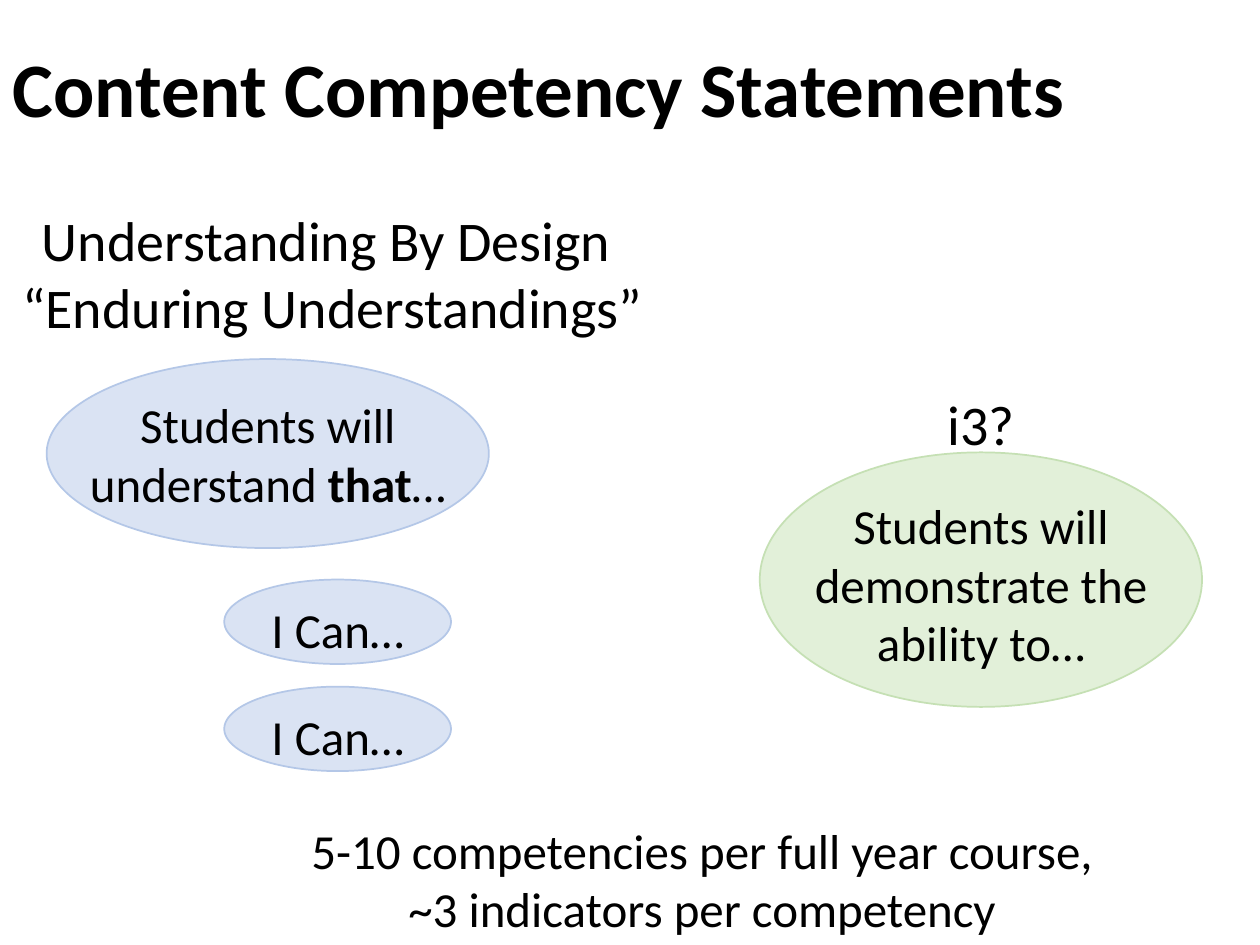
from pptx import Presentation
from pptx.dml.color import RGBColor
from pptx.enum.shapes import MSO_SHAPE
from pptx.enum.text import MSO_ANCHOR, MSO_AUTO_SIZE, PP_ALIGN
from pptx.util import Inches, Pt

OVAL = MSO_SHAPE.OVAL
MIDDLE = MSO_ANCHOR.MIDDLE
NO_FIT, GROW = MSO_AUTO_SIZE.NONE, MSO_AUTO_SIZE.SHAPE_TO_FIT_TEXT
LEFT, CENTER = PP_ALIGN.LEFT, PP_ALIGN.CENTER

FONT = "Calibri"
BLACK = "000000"
BLUE = ("DAE3F3", "B4C7E7")
GREEN = ("E2F0D9", "C5E0B4")


def color(hex_string):
    return RGBColor.from_string(hex_string)


def format_runs(paragraph, size, bold=False):
    for run in paragraph.runs:
        run.font.name = FONT
        run.font.size = Pt(size)
        run.font.bold = bold
        run.font.color.rgb = color(BLACK)


def add_title(slide, box, text):
    title = slide.shapes.title
    title.left, title.top, title.width, title.height = map(Inches, box)
    frame = title.text_frame
    frame.text = text
    frame.word_wrap = True
    frame.auto_size = NO_FIT
    frame.vertical_anchor = MIDDLE
    paragraph = frame.paragraphs[0]
    paragraph.alignment = LEFT
    paragraph.line_spacing = 0.9
    format_runs(paragraph, 44, bold=True)


def add_text(slide, box, lines, size, wrap=True, insets=(0.1, 0.05)):
    """Add centred lines of text and return their text frame."""
    frame = slide.shapes.add_textbox(*map(Inches, box)).text_frame
    frame.text = "\n".join(lines)
    frame.word_wrap = wrap
    frame.auto_size = GROW
    frame.margin_left = frame.margin_right = Inches(insets[0])
    frame.margin_top = frame.margin_bottom = Inches(insets[1])
    for paragraph in frame.paragraphs:
        paragraph.alignment = CENTER
        format_runs(paragraph, size)
    return frame


def add_bubble(slide, box, colors, text, text_offset, text_height):
    """Add an ellipse with a text box placed inside it."""
    left, top, width, height = box
    fill, line = colors
    ellipse = slide.shapes.add_shape(OVAL, *map(Inches, box))
    ellipse.shadow.inherit = False
    ellipse.fill.solid()
    ellipse.fill.fore_color.rgb = color(fill)
    ellipse.line.color.rgb = color(line)
    ellipse.line.width = Pt(1)
    offset_left, offset_top = text_offset
    text_box = (left + offset_left, top + offset_top,
                width - 2 * offset_left, text_height)
    return add_text(slide, text_box, [text], 28, insets=(0.07, 0.04))


def add_understandings(slide, left, top):
    # Main statement, with one word in bold
    frame = add_bubble(slide, (left, top, 3.51, 1.5), BLUE,
                       "Students will understand ", (0.21, 0.24), 1.02)
    paragraph = frame.paragraphs[0]
    for text in ("that", "…"):
        paragraph.add_run().text = text
    format_runs(paragraph, 28)
    paragraph.runs[1].font.bold = True

    # Indicators below it
    for index in range(2):
        box = (left + 1.41, top + 1.75 + index * 0.85, 1.8, 0.67)
        add_bubble(slide, box, BLUE, "I Can…", (0.13, 0.12), 0.55)

    # Heading above it
    add_text(slide, (left - 0.37, top - 1.27, 5.28, 1.18),
             ["Understanding By Design ", "“Enduring Understandings”"],
             32, wrap=False)


def add_abilities(slide, left, top):
    add_bubble(slide, (left, top, 3.51, 2.02), GREEN,
               "Students will demonstrate the ability to…", (0.21, 0.3), 1.49)
    add_text(slide, (left + 1.38, top - 0.55, 0.75, 0.64), ["i3?"], 32, wrap=False)


def main():
    presentation = Presentation()
    presentation.slide_width = Inches(10)
    presentation.slide_height = Inches(7.5)
    slide = presentation.slides.add_slide(presentation.slide_layouts[5])

    add_title(slide, (0, 0.01, 9.29, 1.45), "Content Competency Statements")
    add_understandings(slide, 0.37, 2.85)
    add_abilities(slide, 6.03, 3.59)

    # Closing note
    add_text(slide, (1.54, 6.46, 8.15, 1.04),
             ["5-10 competencies per full year course, ",
              "~3 indicators per competency "], 28)

    presentation.save("out.pptx")


if __name__ == "__main__":
    main()
